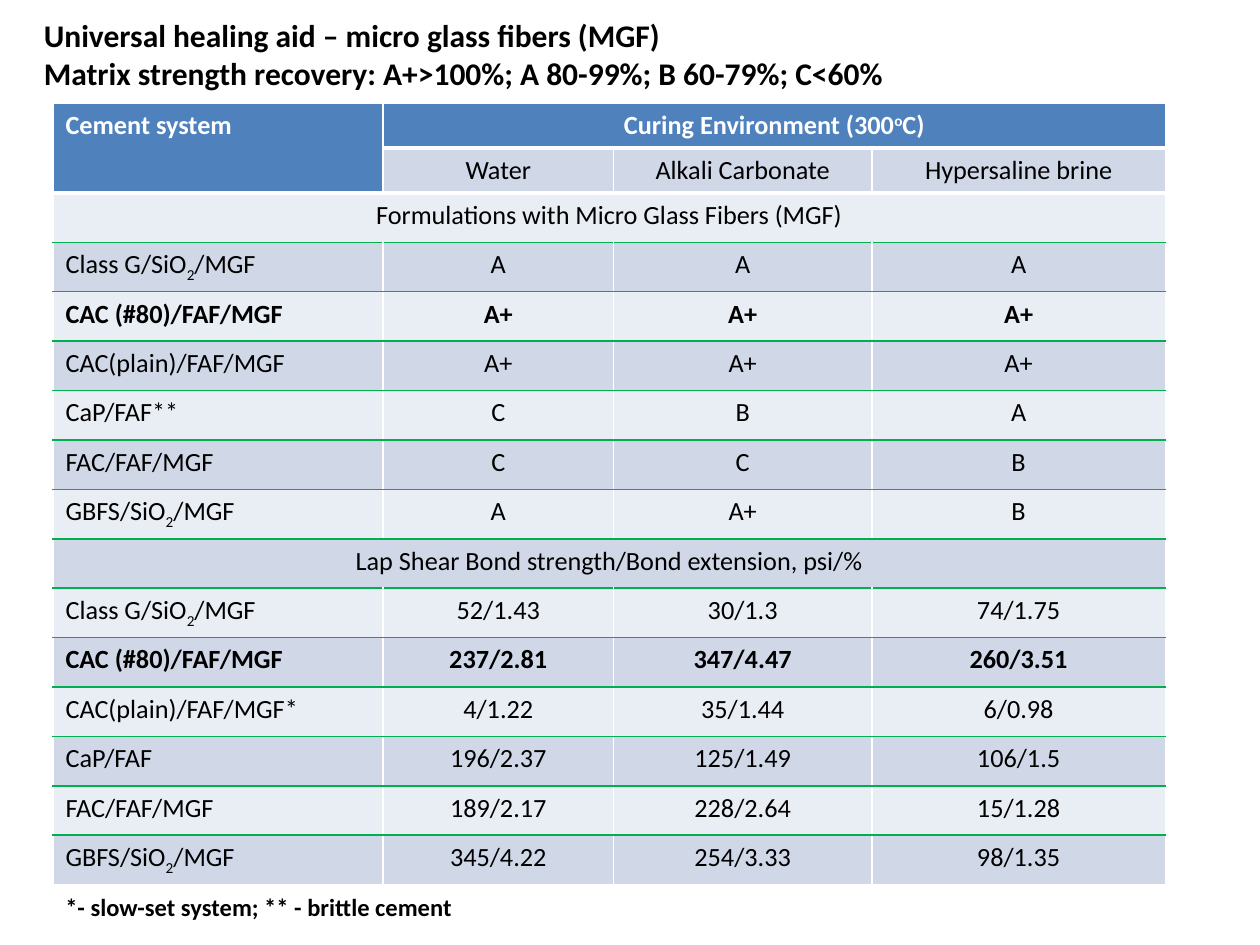
import pptx
import pptx.util
import pptx.oxml
import pptx.oxml.ns
import pptx.dml.color
import pptx.enum.text

Inches = pptx.util.Inches
ALIGN = pptx.enum.text.PP_ALIGN

COLORS = {
    "head": "4F81BD",
    "dark": "D0D8E8",
    "light": "E9EDF4",
    "rule": "00B050",
    "white": "FFFFFF",
    "black": "000000",
}
WIDTHS = [2.62, 1.83, 2.05, 2.33]
HEADS = [0.34, 0.35]
HEIGHT = 6.18
SPANS = [(0, 0, 1, 0), (0, 1, 0, 3), (2, 0, 2, 3), (9, 0, 9, 3)]
ROWS = [
    ["Cement system", "Curing Environment (300~o~C)", "", ""],
    ["", "Water", "Alkali Carbonate", "Hypersaline brine"],
    ["Formulations with Micro Glass Fibers (MGF)", "", "", ""],
    ["Class G/SiO~2~/MGF", "A", "A", "A"],
    ["CAC (#80)/FAF/MGF", "A+", "A+", "A+"],
    ["CAC(plain)/FAF/MGF", "A+", "A+", "A+"],
    ["CaP/FAF**", "C", "B", "A"],
    ["FAC/FAF/MGF", "C", "C", "B"],
    ["GBFS/SiO~2~/MGF", "A", "A+", "B"],
    ["Lap Shear Bond strength/Bond extension, psi/%", "", "", ""],
    ["Class G/SiO~2~/MGF", "52/1.43", "30/1.3", "74/1.75"],
    ["CAC (#80)/FAF/MGF", "237/2.81", "347/4.47", "260/3.51"],
    ["CAC(plain)/FAF/MGF*", "4/1.22", "35/1.44", "6/0.98"],
    ["CaP/FAF", "196/2.37", "125/1.49", "106/1.5"],
    ["FAC/FAF/MGF", "189/2.17", "228/2.64", "15/1.28"],
    ["GBFS/SiO~2~/MGF", "345/4.22", "254/3.33", "98/1.35"],
]


def paint(name):
    return pptx.dml.color.RGBColor.from_string(COLORS[name])


def write(frame, text, size=15, color="black", bold=False, align=ALIGN.LEFT, shift=-25):
    for i, line in enumerate(text.split("\n")):
        para = frame.add_paragraph() if i else frame.paragraphs[0]
        para.alignment = align
        for j, part in enumerate(line.split("~")):
            run = para.add_run()
            run.text = part
            font = run.font
            font.name = "Calibri"
            font.size = pptx.util.Pt(size)
            font.bold = bold
            font.color.rgb = paint(color)
            if j % 2:
                run._r.get_or_add_rPr().set("baseline", str(shift * 1000))


def edge(row):
    if row in (1, 2):
        return "white", 3
    return ("white" if row in (0, len(ROWS)) else "rule"), 1


def border(cell, sides):
    props = cell._tc.get_or_add_tcPr()
    for i, (side, (color, width)) in enumerate(sides.items()):
        line = pptx.oxml.parse_xml(
            f'<a:ln{side} {pptx.oxml.ns.nsdecls("a")} w="{pptx.util.Pt(width)}">'
            f'<a:solidFill><a:srgbClr val="{COLORS[color]}"/></a:solidFill></a:ln{side}>'
        )
        props.insert(i, line)


class Deck:
    def __init__(self):
        self.file = pptx.Presentation()
        self.file.slide_width = Inches(10)
        self.file.slide_height = Inches(7.5)
        self.slide = self.file.slides.add_slide(self.file.slide_layouts[6])

    def text(self, text, left, top, width, height, wrap=True, **style):
        box = self.slide.shapes.add_textbox(*map(Inches, (left, top, width, height)))
        box.text_frame.word_wrap = wrap
        write(box.text_frame, text, **style)

    def table(self, left, top):
        shape = self.slide.shapes.add_table(
            len(ROWS), len(WIDTHS), Inches(left), Inches(top),
            Inches(sum(WIDTHS)), Inches(HEIGHT))
        grid = shape.table
        for col, width in zip(grid.columns, WIDTHS):
            col.width = Inches(width)
        body = (HEIGHT - sum(HEADS)) / (len(ROWS) - len(HEADS))
        for i, row in enumerate(grid.rows):
            row.height = Inches(HEADS[i] if i < len(HEADS) else body)
        for r, c, last, end in SPANS:
            grid.cell(r, c).merge(grid.cell(last, end))
        for r, row in enumerate(ROWS):
            for c, text in enumerate(row):
                cell = grid.cell(r, c)
                if not cell.is_spanned:
                    self.cell(cell, text, r, c)

    def cell(self, cell, text, row, col):
        head = row == 0
        wide = cell.span_width == len(WIDTHS)
        fill = "head" if head else "dark" if row % 2 else "light"
        cell.fill.solid()
        cell.fill.fore_color.rgb = paint(fill)
        write(cell.text_frame, text,
              color="white" if head else "black",
              bold=head or ROWS[row][0].startswith("CAC (#80)"),
              align=ALIGN.CENTER if col or wide else ALIGN.LEFT,
              shift=30 if head else -25)
        side = ("white", 1)
        border(cell, {"L": side, "R": side, "T": edge(row),
                      "B": edge(row + cell.span_height)})


def main():
    deck = Deck()
    deck.table(0.42, 0.82)
    deck.text("Universal healing aid – micro glass fibers (MGF)\n"
              "Matrix strength recovery: A+>100%; A 80-99%; B 60-79%; C<60%",
              0.25, 0.08, 9.67, 0.71, size=18, bold=True)
    deck.text("*- slow-set system; ** - brittle cement",
              0.42, 7.03, 3.3, 0.34, wrap=False, size=14, bold=True)
    deck.file.save("out.pptx")


if __name__ == "__main__":
    main()
